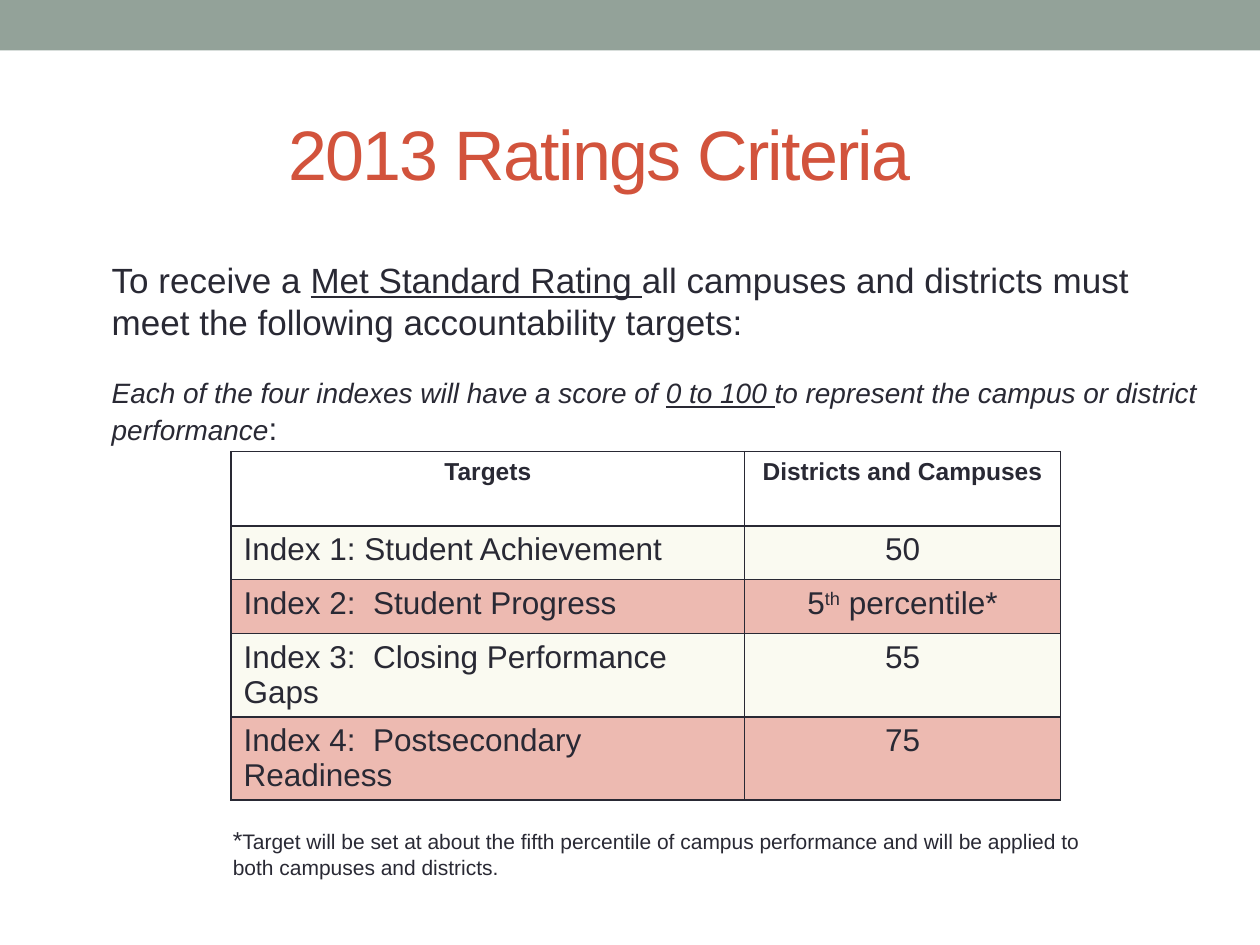
from lxml import etree
from pptx import Presentation
from pptx.dml.color import RGBColor
from pptx.enum import shapes, text
from pptx.oxml import ns
from pptx.util import Pt

INK = RGBColor(0x29, 0x29, 0x34)
RED = RGBColor(0xD2, 0x53, 0x3C)
SAGE = RGBColor(0x93, 0xA2, 0x99)
CREAM = RGBColor(0xFA, 0xFA, 0xF1)
ROSE = RGBColor(0xED, 0xBA, 0xB1)
LEFT, CENTER = text.PP_ALIGN.LEFT, text.PP_ALIGN.CENTER

# Content: each paragraph is a list of (wording, font values)
TITLE = [("2013 Ratings Criteria", {"size": Pt(40), "color": RED})]
LEAD = {"size": Pt(20)}
SCORE = {"size": Pt(16), "italic": True}
INTRO = [
    (2, [("To receive a ", LEAD),
         ("Met Standard Rating ", {**LEAD, "underline": True}),
         ("all campuses and districts must meet the following "
          "accountability targets:", LEAD)]),
    (19, [("Each of the four indexes will have a score of ", SCORE),
          ("0 to 100 ", {**SCORE, "underline": True}),
          ("to represent the campus or district performance", SCORE),
          (":", {"size": Pt(18)})]),
]
HEAD = {"size": Pt(14), "bold": True}
CELL = {"size": Pt(18), "bold": False}
HEADINGS = ["Targets", "Districts and Campuses"]
TARGETS = [
    ("Index 1: Student Achievement", [("50", CELL)]),
    ("Index 2:  Student Progress",
     [("5", CELL), ("th", {**CELL, "raised": 30000}), (" percentile*", CELL)]),
    ("Index 3:  Closing Performance Gaps", [("55", CELL)]),
    ("Index 4:  Postsecondary Readiness", [("75", CELL)]),
]
FOOTNOTE = [
    ("*", {"size": Pt(14)}),
    ("Target will be set at about the fifth percentile of campus performance "
     "and will be applied to both campuses and districts.", {"size": Pt(12)}),
]
COLUMN_WIDTHS = [293.5, 180.5]
ROW_HEIGHTS = [42.5, 30.8, 30.8, 46, 46]


def place(part, *box):
    for side, length in zip(("left", "top", "width", "height"), box):
        setattr(part, side, Pt(length))


def write(paragraph, runs, align=LEFT):
    paragraph.alignment = align
    for wording, values in runs:
        run = paragraph.add_run()
        run.text = wording
        run.font.name = "Arial"
        run.font.color.rgb = INK
        for name, value in values.items():
            if name == "color":
                run.font.color.rgb = value
            elif name == "raised":
                run.font._element.set("baseline", str(value))
            else:
                setattr(run.font, name, value)


def outline(cell):
    properties = cell._tc.get_or_add_tcPr()
    for position, edge in enumerate(("lnL", "lnR", "lnT", "lnB")):
        line = etree.Element(ns.qn(f"a:{edge}"), w=str(Pt(1)))
        fill = etree.SubElement(line, ns.qn("a:solidFill"))
        etree.SubElement(fill, ns.qn("a:srgbClr"), val=str(INK))
        properties.insert(position, line)


deck = Presentation()
deck.slide_width, deck.slide_height = Pt(720), Pt(540)
slide = deck.slides.add_slide(deck.slide_layouts[1])
title, intro = slide.placeholders

# Band along the top
band = slide.shapes.add_shape(shapes.MSO_SHAPE.RECTANGLE, 0, 0, Pt(720), Pt(28.8))
band.shadow.inherit = False
band.fill.solid()
band.fill.fore_color.rgb = SAGE
band.line.fill.background()

# Title
place(title, 66, 42, 553, 90)
title.text_frame.vertical_anchor = text.MSO_ANCHOR.MIDDLE
write(title.text_frame.paragraphs[0], TITLE, CENTER)
title.text_frame.paragraphs[0].runs[0].font._element.set("spc", "-100")

# Introduction
place(intro, 48, 144, 648, 371)
intro.text_frame.auto_size = text.MSO_AUTO_SIZE.NONE
for number, (gap, runs) in enumerate(INTRO):
    frame = intro.text_frame
    paragraph = frame.add_paragraph() if number else frame.paragraphs[0]
    paragraph.space_before = Pt(gap)
    write(paragraph, runs)
    properties = paragraph._p.get_or_add_pPr()
    properties.set("marL", str(Pt(8.64)))
    properties.set("indent", "0")
    etree.SubElement(properties, ns.qn("a:buNone"))

# Table of targets
rows = [[[(heading, HEAD)] for heading in HEADINGS]]
rows += [[[(target, CELL)], score] for target, score in TARGETS]
table = slide.shapes.add_table(
    len(rows), len(HEADINGS), Pt(132), Pt(258),
    Pt(sum(COLUMN_WIDTHS)), Pt(sum(ROW_HEIGHTS))).table
for column, width in zip(table.columns, COLUMN_WIDTHS):
    column.width = Pt(width)
for r, (row, height) in enumerate(zip(rows, ROW_HEIGHTS)):
    table.rows[r].height = Pt(height)
    for c, runs in enumerate(row):
        cell = table.cell(r, c)
        write(cell.text_frame.paragraphs[0], runs,
              LEFT if r and c == 0 else CENTER)
        if r:
            cell.fill.solid()
            cell.fill.fore_color.rgb = CREAM if r % 2 else ROSE
        else:
            cell.fill.background()
        outline(cell)

# Footnote
footnote = slide.shapes.add_textbox(Pt(126), Pt(468), Pt(504), Pt(39))
footnote.text_frame.word_wrap = True
write(footnote.text_frame.paragraphs[0], FOOTNOTE)

deck.save("out.pptx")
